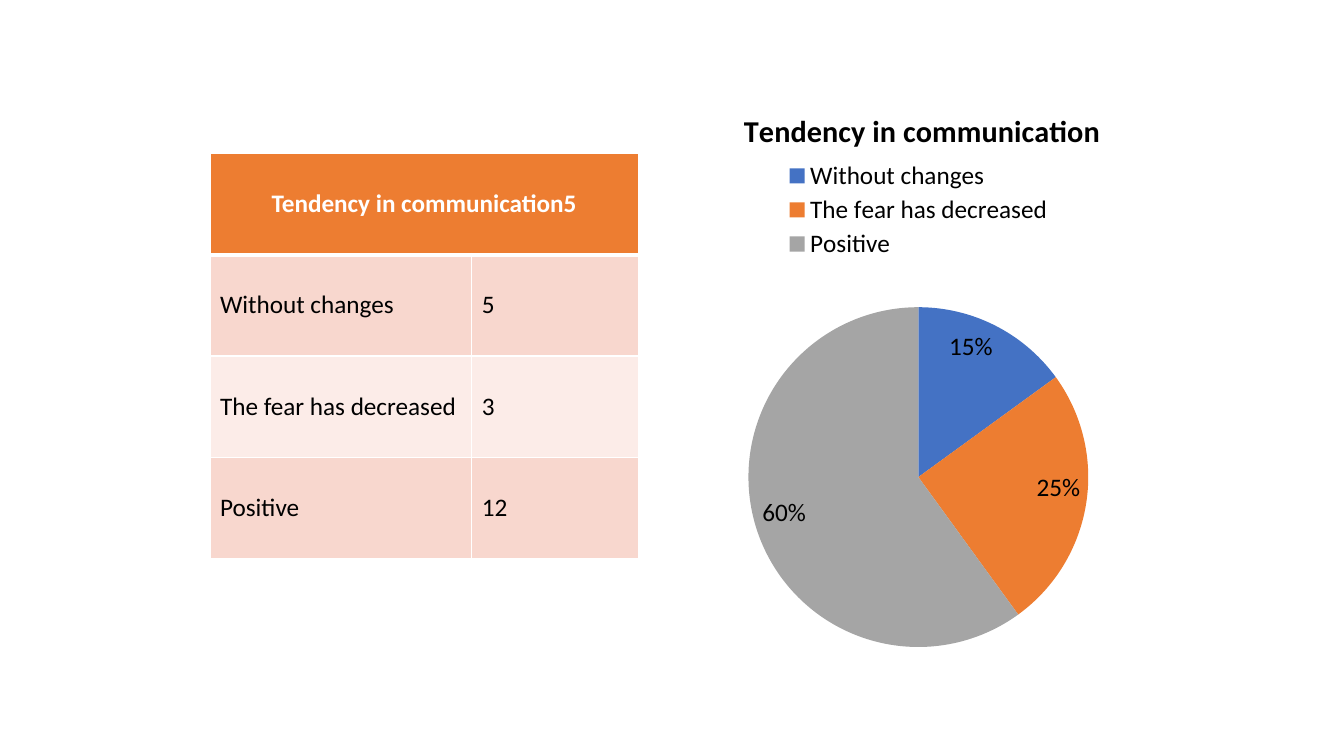
from lxml import etree
from pptx import Presentation
from pptx.chart.data import CategoryChartData
from pptx.dml.color import RGBColor
from pptx.enum.chart import XL_CHART_TYPE, XL_LABEL_POSITION, XL_LEGEND_POSITION
from pptx.enum.text import MSO_ANCHOR, PP_ALIGN
from pptx.oxml import parse_xml
from pptx.oxml.ns import nsdecls, qn
from pptx.util import Pt

PIE = XL_CHART_TYPE.PIE
INSIDE_END = XL_LABEL_POSITION.INSIDE_END
LEGEND_TOP = XL_LEGEND_POSITION.TOP
MIDDLE = MSO_ANCHOR.MIDDLE
CENTER, LEFT = PP_ALIGN.CENTER, PP_ALIGN.LEFT

FONT = "Calibri"
COLORS = {
    "black": "000000", "white": "FFFFFF",
    "header": "ED7D31", "band_dark": "F8D7CE", "band_light": "FCECE8",
    "blue": "4472C4", "orange": "ED7D31", "gray": "A5A5A5",
}
TITLE = "Tendency in communication"
ANSWERS = [  # answer, count, share in percent, slice colour
    ("Without changes", 5, 15, "blue"),
    ("The fear has decreased", 3, 25, "orange"),
    ("Positive", 12, 60, "gray"),
]


def rgb(name):
    return RGBColor.from_string(COLORS[name])


def set_font(font, size, color, bold=False):
    font.name, font.size, font.bold = FONT, Pt(size), bold
    font.color.rgb = rgb(color)


def set_borders(cell, top=1, bottom=1):
    """Draw white borders; widths are in points."""
    tcPr = cell._tc.get_or_add_tcPr()
    for i, (side, width) in enumerate(zip("LRTB", (1, 1, top, bottom))):
        tcPr.insert(i, parse_xml(
            f'<a:ln{side} {nsdecls("a")} w="{Pt(width)}"><a:solidFill>'
            f'<a:srgbClr val="{COLORS["white"]}"/></a:solidFill></a:ln{side}>'))


def fill_cell(cell, text, fill, color="black", bold=False, align=LEFT):
    cell.fill.solid()
    cell.fill.fore_color.rgb = rgb(fill)
    cell.vertical_anchor = MIDDLE
    p = cell.text_frame.paragraphs[0]
    p.text = text
    p.alignment = align
    set_font(p.font, 18, color, bold)


def add_answer_table(s):
    rows = len(ANSWERS) + 1
    table = s.shapes.add_table(rows, 2, Pt(150), Pt(109.5), Pt(306), Pt(289.5)).table
    for column, width in zip(table.columns, (187, 119)):
        column.width = Pt(width)
    for r, row in enumerate(table.rows):
        row.height = Pt(72.4)
        for cell in row.cells:
            set_borders(cell, top=3 if r == 1 else 1, bottom=3 if r == 0 else 1)
    header = table.cell(0, 0)
    header.merge(table.cell(0, 1))
    fill_cell(header, TITLE + "5", "header", "white", True, CENTER)
    for r, (answer, count, _, _) in enumerate(ANSWERS, 1):
        band = "band_dark" if r % 2 else "band_light"
        fill_cell(table.cell(r, 0), answer, band)
        fill_cell(table.cell(r, 1), str(count), band)


def set_layout(element, index, inner=False, **fractions):
    """Place a chart part by fractions of the chart area."""
    for old in element.findall(qn("c:layout")):
        element.remove(old)
    layout = etree.Element(qn("c:layout"))
    manual = etree.SubElement(layout, qn("c:manualLayout"))
    if inner:
        etree.SubElement(manual, qn("c:layoutTarget"), val="inner")
    for key in ("x", "y"):
        etree.SubElement(manual, qn(f"c:{key}Mode"), val="edge")
    for key, value in fractions.items():
        etree.SubElement(manual, qn(f"c:{key}"), val=str(value))
    element.insert(index, layout)


def add_share_pie(s):
    data = CategoryChartData()
    data.categories = [answer for answer, *_ in ANSWERS]
    data.add_series(TITLE, [share for _, _, share, _ in ANSWERS])
    chart = s.shapes.add_chart(PIE, Pt(477.5), Pt(53.5), Pt(357), Pt(419.5), data).chart
    set_font(chart.font, 18, "black")

    chart.has_title = True
    p = chart.chart_title.text_frame.paragraphs[0]
    p.text = TITLE
    set_font(p.font, 21.6, "black", True)
    set_layout(chart.chart_title._element, 1, x=0.14, y=0.05)

    chart.has_legend = True
    chart.legend.position = LEGEND_TOP
    chart.legend.include_in_layout = False
    set_layout(chart.legend._element, 1, x=0.23, y=0.14, w=0.54, h=0.18)

    plot = chart.plots[0]
    set_layout(plot._element.getparent(), 0, inner=True, x=0.16, y=0.395, w=0.68, h=0.58)
    for i, (*_, color) in enumerate(ANSWERS):
        fill = plot.series[0].points[i].format.fill
        fill.solid()
        fill.fore_color.rgb = rgb(color)
    plot.has_data_labels = True
    labels = plot.data_labels
    labels.show_percentage, labels.show_value = True, False
    labels.number_format, labels.number_format_is_linked = "0%", False
    labels.position = INSIDE_END
    set_font(labels.font, 18, "black")


def main():
    prs = Presentation()
    prs.slide_width, prs.slide_height = Pt(960), Pt(540)
    s = prs.slides.add_slide(prs.slide_layouts[6])
    add_answer_table(s)
    add_share_pie(s)
    prs.save("out.pptx")


if __name__ == "__main__":
    main()
